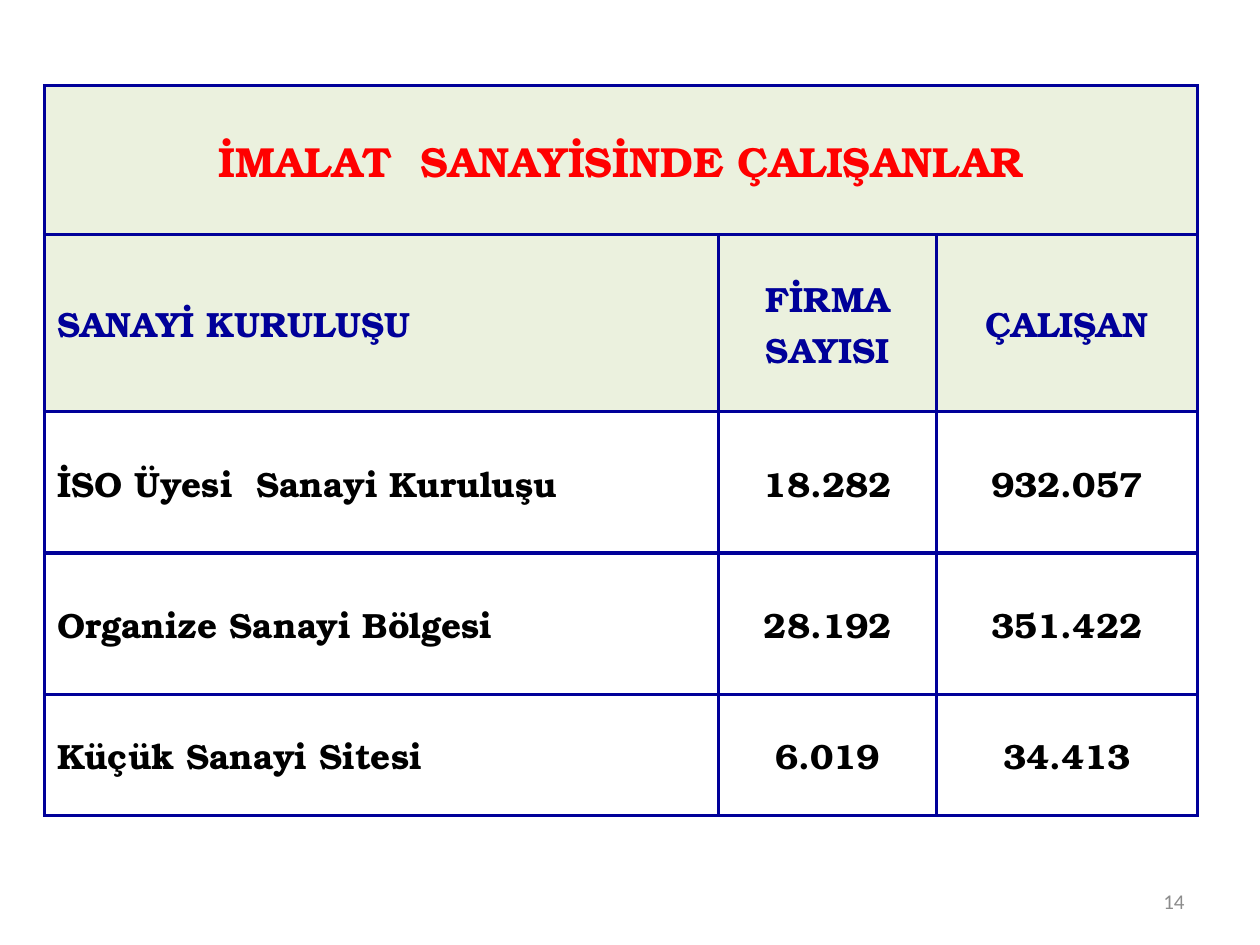
from lxml.etree import SubElement
from pptx import Presentation
from pptx.dml.color import RGBColor
from pptx.enum.text import MSO_ANCHOR as Anchor, PP_ALIGN as Align
from pptx.oxml.ns import qn
from pptx.util import Pt

COLORS = {"navy": "000099", "red": "FF0000", "black": "000000",
          "white": "FFFFFF", "header": "EBF1DE", "gray": "8C8C8C"}
SERIF = "TeX Gyre Bonum"
HEADING = "İMALAT  SANAYİSİNDE ÇALIŞANLAR"
ROWS = [
    ("SANAYİ KURULUŞU", "FİRMA SAYISI", "ÇALIŞAN"),
    ("İSO Üyesi  Sanayi Kuruluşu", "18.282", "932.057"),
    ("Organize Sanayi Bölgesi", "28.192", "351.422"),
    ("Küçük Sanayi Sitesi", "6.019", "34.413"),
]
COLUMN_WIDTHS = (385.2, 124.5, 149)
ROW_HEIGHTS = (85, 101, 81, 81, 69)


def rgb(name):
    return RGBColor.from_string(COLORS[name])


def write(frame, text, align, color, **font_format):
    paragraph = frame.paragraphs[0]
    paragraph.alignment = align
    run = paragraph.add_run()
    run.text = text
    for key, value in font_format.items():
        setattr(run.font, key, value)
    run.font.color.rgb = rgb(color)


def add_borders(cell, color="navy", width=2.25):
    properties = cell._tc.get_or_add_tcPr()
    # Borders must come before the fill in the cell properties
    for position, side in enumerate(("lnL", "lnR", "lnT", "lnB")):
        line = SubElement(properties, qn(f"a:{side}"), w=str(Pt(width)))
        fill = SubElement(line, qn("a:solidFill"))
        SubElement(fill, qn("a:srgbClr"), val=COLORS[color])
        properties.insert(position, line)


def format_cell(cell, fill):
    cell.fill.solid()
    cell.fill.fore_color.rgb = rgb(fill)
    cell.vertical_anchor = Anchor.MIDDLE
    add_borders(cell)


def add_employment_table(slide, left, top, width, height):
    table = slide.shapes.add_table(
        len(ROW_HEIGHTS), len(COLUMN_WIDTHS),
        Pt(left), Pt(top), Pt(width), Pt(height)).table
    for column, column_width in zip(table.columns, COLUMN_WIDTHS):
        column.width = Pt(column_width)
    for row, row_height in zip(table.rows, ROW_HEIGHTS):
        row.height = Pt(row_height)

    # Heading across all columns
    heading = table.cell(0, 0)
    heading.merge(table.cell(0, len(COLUMN_WIDTHS) - 1))
    for column in range(len(COLUMN_WIDTHS)):
        format_cell(table.cell(0, column), "header")
    write(heading.text_frame, HEADING, Align.CENTER, "red",
          name=SERIF, size=Pt(24), bold=True)

    # Column labels, then one row per kind of organisation
    for r, values in enumerate(ROWS, start=1):
        fill, color = ("header", "navy") if r == 1 else ("white", "black")
        for c, value in enumerate(values):
            cell = table.cell(r, c)
            format_cell(cell, fill)
            write(cell.text_frame, value, Align.CENTER if c else Align.LEFT,
                  color, name=SERIF, size=Pt(20), bold=True)


def add_page_number(slide, left, top, width, height):
    frame = slide.shapes.add_textbox(
        Pt(left), Pt(top), Pt(width), Pt(height)).text_frame
    frame.word_wrap = True
    frame.vertical_anchor = Anchor.MIDDLE
    write(frame, "14", Align.RIGHT, "gray", name="Calibri", size=Pt(12))


def main():
    deck = Presentation()
    deck.slide_width, deck.slide_height = Pt(720), Pt(540)
    slide = deck.slides.add_slide(deck.slide_layouts[6])
    add_employment_table(slide, 25.5, 49, sum(COLUMN_WIDTHS), sum(ROW_HEIGHTS))
    add_page_number(slide, 516, 500.5, 168, 28.8)
    deck.save("out.pptx")


if __name__ == "__main__":
    main()
